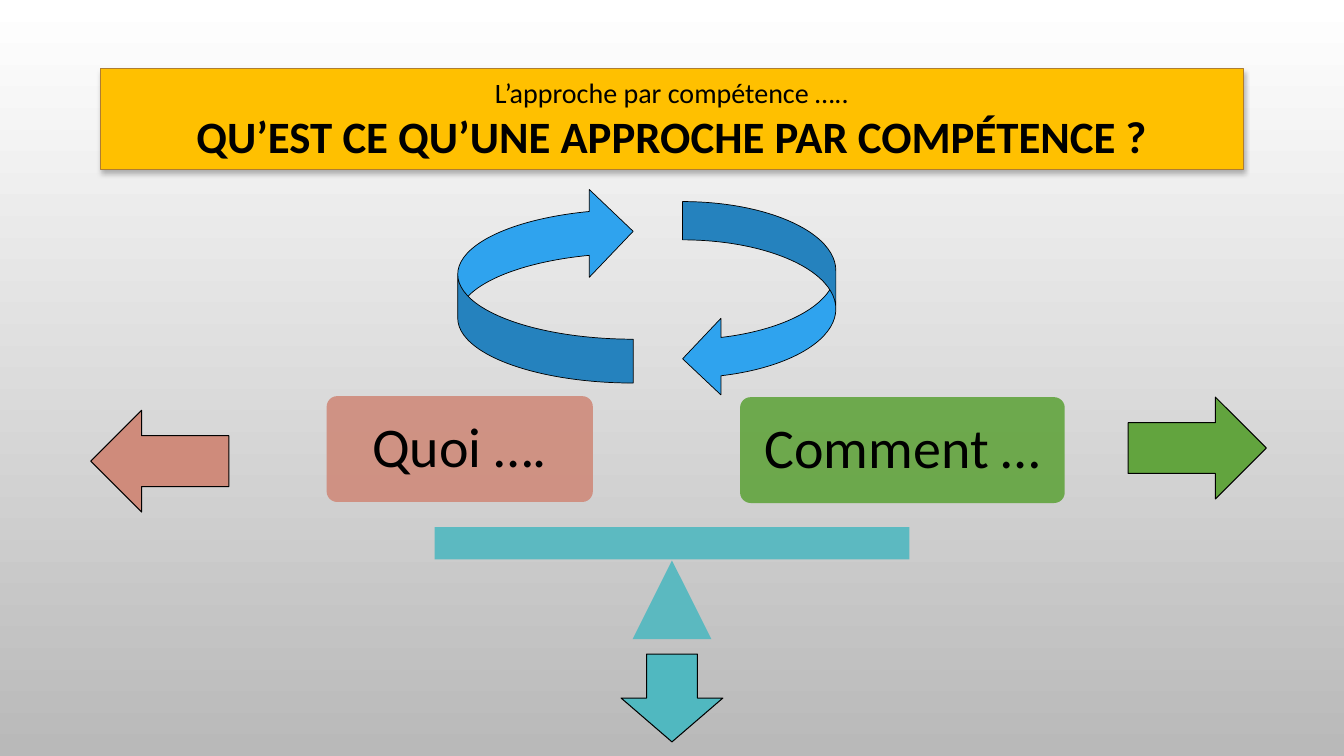
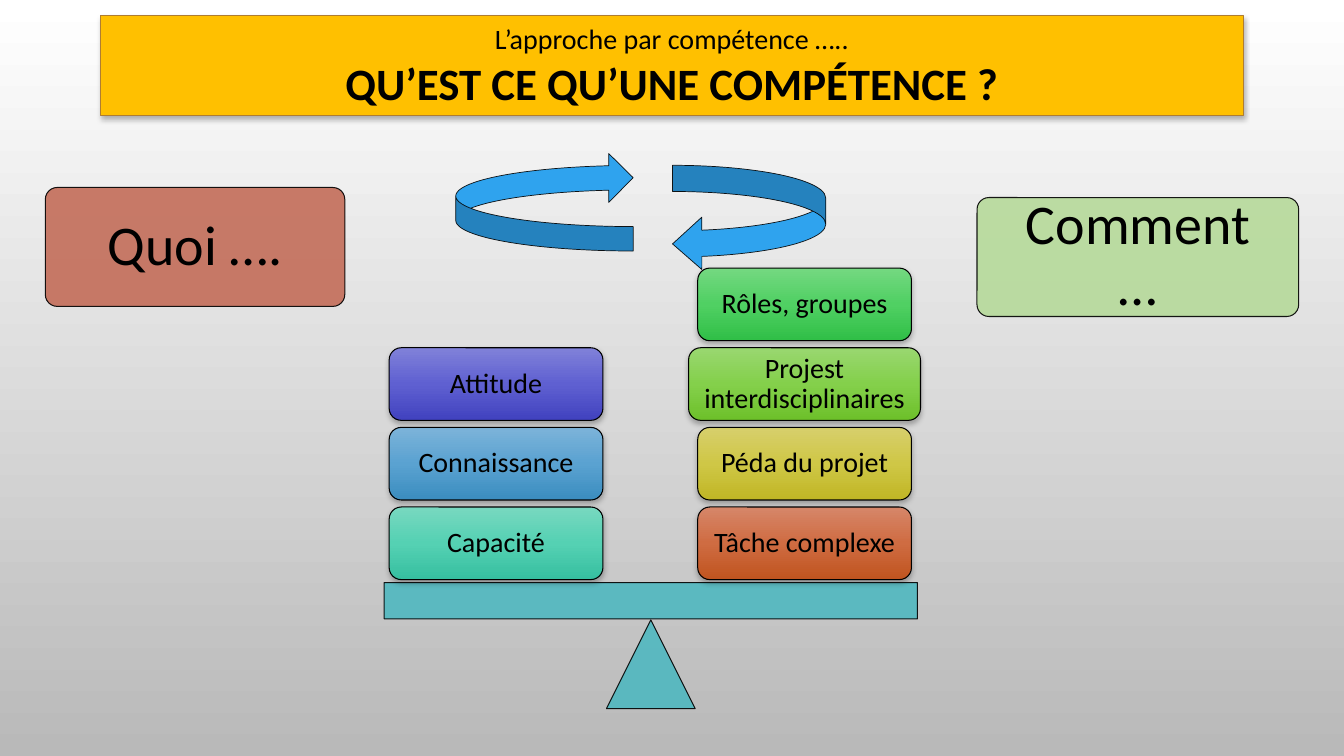
"""Build two slides that weigh the what and the how of the competence approach."""
from dataclasses import dataclass
from typing import Optional

from lxml import etree
from pptx import Presentation
from pptx.dml.color import RGBColor
from pptx.dml.fill import FillFormat
from pptx.enum.shapes import MSO_SHAPE
from pptx.enum.text import MSO_ANCHOR, MSO_AUTO_SIZE, PP_ALIGN
from pptx.oxml.ns import qn
from pptx.shapes.autoshape import Shape
from pptx.slide import Slide
from pptx.text.text import TextFrame
from pptx.util import Inches, Pt

RECTANGLE = MSO_SHAPE.RECTANGLE
ROUNDED = MSO_SHAPE.ROUNDED_RECTANGLE
TRIANGLE = MSO_SHAPE.ISOSCELES_TRIANGLE
CURVED_LEFT = MSO_SHAPE.CURVED_LEFT_ARROW
LEFT_ARROW = MSO_SHAPE.LEFT_ARROW
RIGHT_ARROW = MSO_SHAPE.RIGHT_ARROW
DOWN_ARROW = MSO_SHAPE.DOWN_ARROW
CENTER = PP_ALIGN.CENTER
MIDDLE = MSO_ANCHOR.MIDDLE
NO_AUTOFIT = MSO_AUTO_SIZE.NONE

FONT = "Calibri"
BLACK = RGBColor(0x00, 0x00, 0x00)
WHITE = RGBColor(0xFF, 0xFF, 0xFF)
GREY = RGBColor(0xB9, 0xB9, 0xB9)
GOLD = RGBColor(0xFF, 0xC0, 0x00)
GOLD_EDGE = RGBColor(0xAE, 0x7D, 0x32)
BLUE = RGBColor(0x2F, 0xA3, 0xEE)
TEAL = RGBColor(0x50, 0xB8, 0xC0)
ROSE = RGBColor(0xCF, 0x8B, 0x7B)
BRICK = RGBColor(0xC3, 0x6D, 0x59)
GREEN = RGBColor(0x62, 0xA4, 0x3E)
PALE_GREEN = RGBColor(0xB6, 0xDA, 0x9A)

SURTITLE = "L’approche par compétence ….."
WHAT = "Quoi …."
HOW = "Comment …"
TITLE_LEFT, TITLE_WIDTH, TITLE_HEIGHT = 1, 11.33, 1
CARD_WIDTH, CARD_HEIGHT, CARD_PITCH, LOWEST_CARD_TOP = 2.12, 0.72, 0.79, 5.03


@dataclass(frozen=True)
class Box:
    """Place and size in inches."""
    left: float
    top: float
    width: float
    height: float


@dataclass(frozen=True)
class Part:
    """A plain shape with its colours."""
    kind: MSO_SHAPE
    box: Box
    color: RGBColor
    line_width: Optional[float] = None
    opacity: int = 100
    line_opacity: int = 100
    rotation: float = 0


@dataclass(frozen=True)
class Card:
    """A weight lying on the beam."""
    label: str
    shades: tuple[str, str, str]
    width: float = CARD_WIDTH


@dataclass(frozen=True)
class Stack:
    """Weights piled up from the beam around one centre."""
    center: float
    cards: tuple[Card, ...]


LEFT_STACK = Stack(4.92, (
    Card("Capacité", ("78D8C0", "55D1B3", "36BFA0")),
    Card("Connaissance", ("7CB3D9", "5AA2D1", "3B8DBF")),
    Card("Attitude", ("8081D9", "5F60D1", "4142BF")),
))
RIGHT_STACK = Stack(7.98, (
    Card("Tâche complexe", ("D68669", "CF6C42", "C0541F")),
    Card("Péda du projet", ("D7CF6C", "CFC746", "C0B625")),
    Card("Projest interdisciplinaires", ("99D770", "84D04B", "6DC02A"), 2.3),
    Card("Rôles, groupes", ("74D881", "50D063", "30BF47")),
))


def set_opacity(properties: etree._Element, percent: int) -> None:
    """Make the solid colour inside the properties translucent."""
    color = properties.find(f"{qn('a:solidFill')}/{qn('a:srgbClr')}")
    etree.SubElement(color, qn("a:alpha"), val=str(percent * 1000))


def set_gradient(fill: FillFormat, owner: etree._Element, shades: tuple) -> None:
    """Fill from top to bottom with evenly spaced shades."""
    fill.gradient()
    fill.gradient_angle = 270
    stops = next(owner.iter(qn("a:gsLst")))
    for stop in list(stops):
        stops.remove(stop)
    for index, shade in enumerate(shades):
        position = 100000 * index // (len(shades) - 1)
        stop = etree.SubElement(stops, qn("a:gs"), pos=str(position))
        etree.SubElement(stop, qn("a:srgbClr"), val=str(shade))


def add_shadow(shape: Shape) -> None:
    """Give the shape a soft shadow below."""
    shape.shadow.inherit = False
    effects = shape._element.spPr.find(qn("a:effectLst"))
    shadow = etree.SubElement(effects, qn("a:outerShdw"), blurRad=str(Pt(4)),
                              dist=str(Pt(2)), dir="5400000", rotWithShape="0")
    color = etree.SubElement(shadow, qn("a:srgbClr"), val=str(BLACK))
    etree.SubElement(color, qn("a:alpha"), val="28000")


def set_line(shape: Shape, color: RGBColor, width: float) -> None:
    """Outline the shape."""
    shape.line.color.rgb = color
    shape.line.width = Pt(width)


def set_frame(frame: TextFrame, inset: float) -> None:
    """Centre the text vertically and wrap it inside the inset."""
    frame.word_wrap = True
    frame.auto_size = NO_AUTOFIT
    frame.vertical_anchor = MIDDLE
    frame.margin_left = frame.margin_right = Inches(inset)
    frame.margin_top = frame.margin_bottom = Inches(inset)


def add_run(paragraph, text: str, size: float, bold: bool = False) -> None:
    """Add one black run."""
    run = paragraph.add_run()
    run.text = text
    run.font.name = FONT
    run.font.size = Pt(size)
    run.font.bold = bold
    run.font.color.rgb = BLACK


def set_label(shape: Shape, text: str, size: float, inset: float) -> None:
    """Write a centred label in the shape."""
    set_frame(shape.text_frame, inset)
    paragraph = shape.text_frame.paragraphs[0]
    paragraph.alignment = CENTER
    paragraph.line_spacing = 0.9
    add_run(paragraph, text, size)


def place(slide: Slide, kind: MSO_SHAPE, box: Box) -> Shape:
    """Add a preset shape without shadow."""
    shape = slide.shapes.add_shape(kind, Inches(box.left), Inches(box.top),
                                   Inches(box.width), Inches(box.height))
    shape.shadow.inherit = False
    return shape


def draw_part(slide: Slide, part: Part) -> Shape:
    """Draw a plain shape."""
    shape = place(slide, part.kind, part.box)
    shape.rotation = part.rotation
    shape.fill.solid()
    shape.fill.fore_color.rgb = part.color
    properties = shape._element.spPr
    if part.opacity < 100:
        set_opacity(properties, part.opacity)
    if part.line_width is None:
        shape.line.fill.background()
    else:
        set_line(shape, BLACK, part.line_width)
        if part.line_opacity < 100:
            set_opacity(properties.find(qn("a:ln")), part.line_opacity)
    return shape


def draw_question(slide: Slide, text: str, box: Box, color: RGBColor,
                  line_width: Optional[float] = None) -> None:
    """Draw one of the two large question boxes."""
    question = draw_part(slide, Part(ROUNDED, box, color, line_width, 90, 90))
    question.adjustments[0] = 0.1
    set_label(question, text, 40, 0.2)


def draw_balance(slide: Slide, beam: Box, pivot_size: float,
                 line_width: Optional[float] = None) -> None:
    """Draw the beam and the pivot centred below it."""
    pivot = Box(beam.left + (beam.width - pivot_size) / 2,
                beam.top + beam.height + 0.01, pivot_size, pivot_size)
    for kind, box in ((TRIANGLE, pivot), (RECTANGLE, beam)):
        draw_part(slide, Part(kind, box, TEAL, line_width, 90, 90))


def draw_cycle(slide: Slide, right: Box, left: Box, head: float = 0.25,
               line_opacity: int = 100) -> None:
    """Draw the two arrows that turn around each other."""
    for box, rotation, depth in ((right, 0, head), (left, 180, 0.25)):
        arrow = draw_part(slide, Part(CURVED_LEFT, box, BLUE, 0.5,
                                      line_opacity=line_opacity, rotation=rotation))
        arrow.adjustments[2] = depth


def draw_stack(slide: Slide, stack: Stack) -> None:
    """Pile the cards upwards from the beam."""
    for level, card in enumerate(stack.cards):
        box = Box(stack.center - card.width / 2, LOWEST_CARD_TOP - level * CARD_PITCH,
                  card.width, CARD_HEIGHT)
        weight = place(slide, ROUNDED, box)
        set_gradient(weight.fill, weight._element, card.shades)
        set_line(weight, BLACK, 0.75)
        add_shadow(weight)
        set_label(weight, card.label, 20, 0.12)


def add_titled_slide(prs: Presentation, heading: str, top: float) -> Slide:
    """Add a slide with the golden title band."""
    slide = prs.slides.add_slide(prs.slide_layouts[5])
    title = slide.shapes.title
    title.left, title.top = Inches(TITLE_LEFT), Inches(top)
    title.width, title.height = Inches(TITLE_WIDTH), Inches(TITLE_HEIGHT)
    title.fill.solid()
    title.fill.fore_color.rgb = GOLD
    set_line(title, GOLD_EDGE, 0.75)
    add_shadow(title)
    set_frame(title.text_frame, 0.05)
    paragraph = title.text_frame.paragraphs[0]
    paragraph.alignment = CENTER
    add_run(paragraph, SURTITLE, 20)
    paragraph.add_line_break()
    add_run(paragraph, heading, 32, True)
    return slide


def build_approach(prs: Presentation) -> None:
    """Build the slide on the competence approach."""
    slide = add_titled_slide(prs, "QU’EST CE QU’UNE APPROCHE PAR COMPÉTENCE ?", 0.68)
    draw_question(slide, WHAT, Box(3.24, 3.93, 2.64, 1.05), ROSE)
    draw_question(slide, HOW, Box(7.34, 3.94, 3.22, 1.05), GREEN)
    draw_balance(slide, Box(4.31, 5.23, 4.71, 0.32), 0.78)
    draw_cycle(slide, Box(6.77, 2, 1.52, 1.94), Box(4.54, 1.86, 1.74, 1.94))
    for kind, box, color in (
        (LEFT_ARROW, Box(0.9, 4.07, 1.37, 1.01), ROSE),
        (RIGHT_ARROW, Box(11.19, 3.94, 1.37, 1.01), GREEN),
        (DOWN_ARROW, Box(6.16, 6.49, 1.01, 0.87), TEAL),
    ):
        draw_part(slide, Part(kind, box, color, 0.75))


def build_competence(prs: Presentation) -> None:
    """Build the slide on what a competence is."""
    slide = add_titled_slide(prs, "QU’EST CE QU’UNE COMPÉTENCE ?", 0.15)
    draw_question(slide, WHAT, Box(0.45, 1.86, 2.97, 1.18), BRICK, 0.75)
    draw_question(slide, HOW, Box(9.69, 1.96, 3.19, 1.18), PALE_GREEN, 0.75)
    draw_balance(slide, Box(3.81, 5.78, 5.29, 0.36), 0.88, 0.75)
    for stack in (RIGHT_STACK, LEFT_STACK):
        draw_stack(slide, stack)
    draw_cycle(slide, Box(6.67, 1.64, 1.52, 1.04), Box(4.52, 1.52, 1.76, 0.97), 0.28, 90)


def main() -> None:
    """Build and save the presentation."""
    prs = Presentation()
    prs.slide_width, prs.slide_height = Inches(13.33), Inches(7.5)
    master = prs.slide_master
    set_gradient(master.background.fill, master._element, (WHITE, GREY))
    build_approach(prs)
    build_competence(prs)
    prs.save("out.pptx")


if __name__ == "__main__":
    main()
